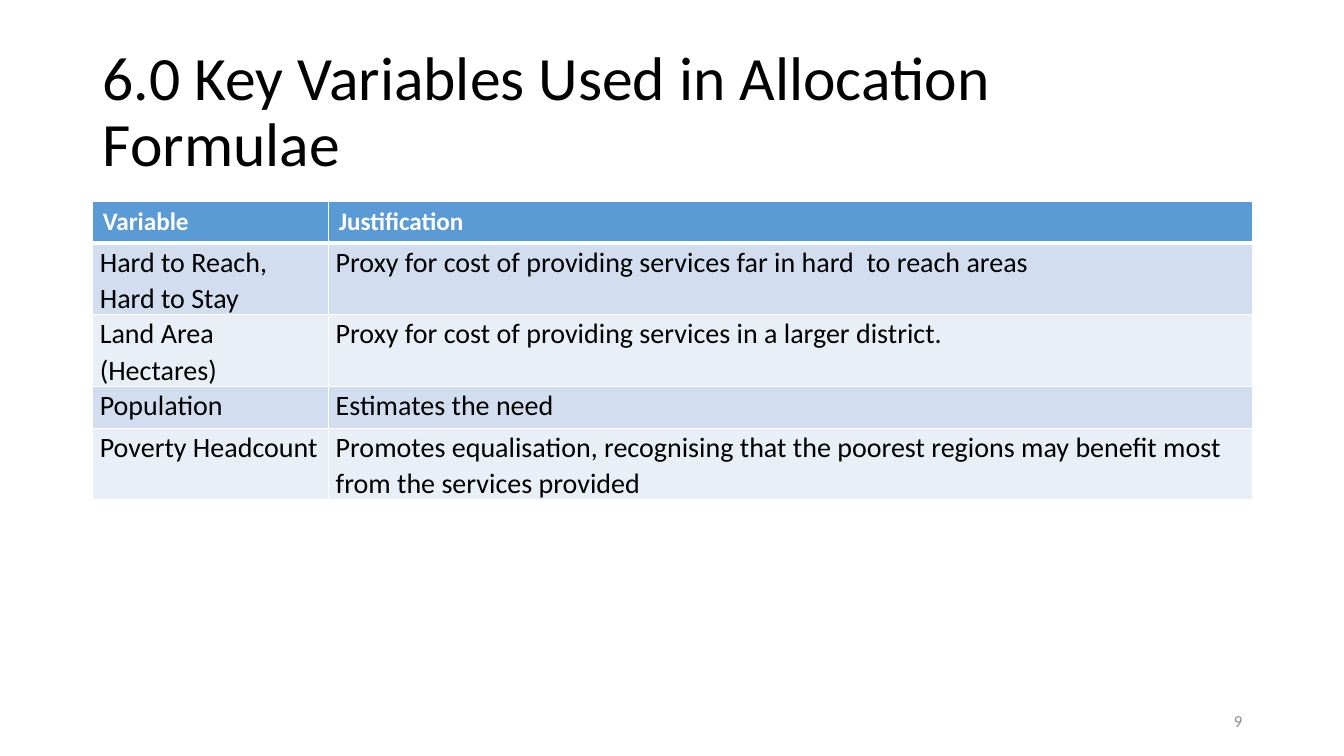
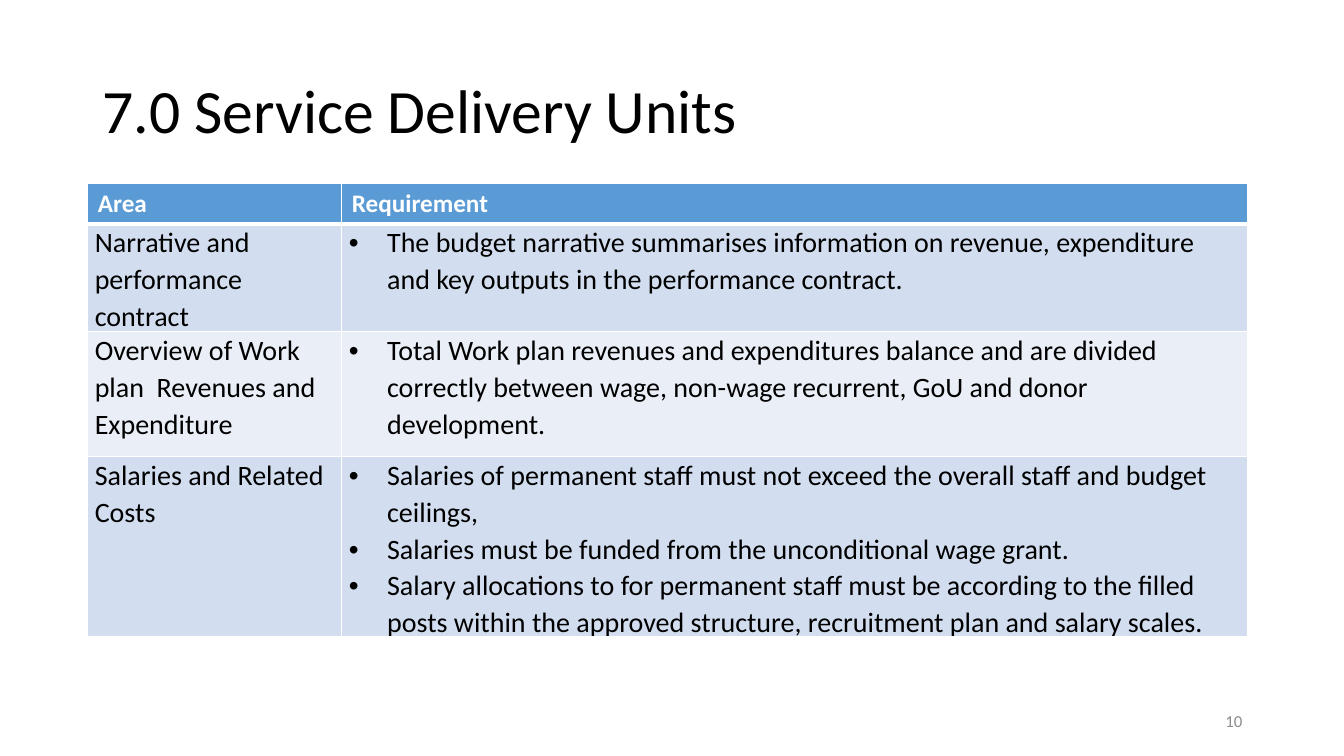
from lxml import etree
from pptx import Presentation
from pptx import util as u
from pptx.dml.color import RGBColor
from pptx.enum import text
from pptx.oxml import ns

COLORS = {
    "ink": "000000",
    "header": "5B9BD5",
    "band_dark": "D2DEEF",
    "band_light": "EAEFF7",
    "white": "FFFFFF",
    "number": "8C8C8C",
}
FONT = "Calibri"
TABLE_WIDTH = 11.5


class Report:
    """Holds the shared style and the current slide."""

    def __init__(self):
        self.deck = Presentation()
        self.deck.slide_width = u.Inches(13.33)
        self.deck.slide_height = u.Inches(7.5)
        self.page = None

    def add_page(self, title, number):
        self.page = self.deck.slides.add_slide(self.deck.slide_layouts[6])
        self.add_box((0.92, 0.4, 11.5, 1.45), title, 44, "ink", spacing=0.9)
        self.add_box((9.42, 6.95, 3, 0.4), str(number), 12, "number",
                     align=text.PP_ALIGN.RIGHT)

    def add_span(self, para, words, size, color, bold=False):
        span = para.add_run()
        span.text = words
        span.font.name = FONT
        span.font.size = u.Pt(size)
        span.font.bold = bold
        span.font.color.rgb = RGBColor.from_string(COLORS[color])

    def add_box(self, place, words, size, color, spacing=1.0,
                align=text.PP_ALIGN.LEFT):
        box = self.page.shapes.add_textbox(*map(u.Inches, place))
        frame = box.text_frame
        frame.word_wrap = True
        frame.vertical_anchor = text.MSO_ANCHOR.MIDDLE
        para = frame.paragraphs[0]
        para.alignment = align
        para.line_spacing = spacing
        self.add_span(para, words, size, color)

    def add_bullet(self, para):
        props = para._p.get_or_add_pPr()
        props.set("marL", str(u.Inches(0.38)))
        props.set("indent", str(u.Inches(-0.38)))
        etree.SubElement(props, ns.qn("a:buFont"), typeface="Arial")
        etree.SubElement(props, ns.qn("a:buChar"), char="•")

    def add_borders(self, cell, top=1, bottom=1):
        props = cell._tc.get_or_add_tcPr()
        edges = {"lnL": 1, "lnR": 1, "lnT": top, "lnB": bottom}
        for place, (edge, points) in enumerate(edges.items()):
            line = etree.Element(ns.qn("a:" + edge), w=str(u.Pt(points)))
            fill = etree.SubElement(line, ns.qn("a:solidFill"))
            etree.SubElement(fill, ns.qn("a:srgbClr"), val=COLORS["white"])
            props.insert(place, line)

    def fill_cell(self, cell, content, row):
        """A list becomes bullets, a string one plain paragraph."""
        header = row == 0
        bulleted = isinstance(content, list)
        if not header:
            cell.margin_left = cell.margin_right = u.Inches(0.07)
            cell.margin_top = cell.margin_bottom = 0
        frame = cell.text_frame
        for index, words in enumerate(content if bulleted else [content]):
            para = frame.add_paragraph() if index else frame.paragraphs[0]
            if header:
                self.add_span(para, words, 18, "white", bold=True)
                continue
            para.line_spacing = 1.07
            if bulleted:
                self.add_bullet(para)
            self.add_span(para, words, 20, "ink")
        band = "header" if header else ("band_light", "band_dark")[row % 2]
        cell.fill.solid()
        cell.fill.fore_color.rgb = RGBColor.from_string(COLORS[band])
        self.add_borders(cell, top=3 if row == 1 else 1,
                         bottom=3 if header else 1)

    def add_table(self, left, top, first_width, heights, rows):
        frame = self.page.shapes.add_table(
            len(rows), 2, u.Inches(left), u.Inches(top),
            u.Inches(TABLE_WIDTH), u.Inches(sum(heights)))
        table = frame.table
        table.columns[0].width = u.Inches(first_width)
        table.columns[1].width = u.Inches(TABLE_WIDTH - first_width)
        for row, (height, contents) in enumerate(zip(heights, rows)):
            table.rows[row].height = u.Inches(height)
            for column, content in enumerate(contents):
                self.fill_cell(table.cell(row, column), content, row)


def main():
    report = Report()

    # Allocation variables
    report.add_page("6.0 Key Variables Used in Allocation Formulae", 9)
    report.add_table(0.92, 2, 2.34, [0.41, 0.41, 0.41, 0.41, 0.49], [
        ("Variable", "Justification"),
        ("Hard to Reach, Hard to Stay",
         "Proxy for cost of providing services far in hard  to reach areas"),
        ("Land Area (Hectares)",
         "Proxy for cost of providing services in a larger district."),
        ("Population", "Estimates the need"),
        ("Poverty Headcount",
         "Promotes equalisation, recognising that the poorest regions may "
         "benefit most from the services provided"),
    ])

    # Service delivery requirements
    report.add_page("7.0 Service Delivery Units", 10)
    report.add_table(0.87, 1.82, 2.52, [0.39, 0.71, 1.24, 1.24], [
        ("Area", "Requirement"),
        ("Narrative and performance contract",
         ["The budget narrative summarises information on revenue, "
          "expenditure and key outputs in the performance contract."]),
        ("Overview of Work plan  Revenues and Expenditure",
         ["Total Work plan revenues and expenditures balance and are divided "
          "correctly between wage, non-wage recurrent, GoU and donor "
          "development."]),
        ("Salaries and Related Costs",
         ["Salaries of permanent staff must not exceed the overall staff and "
          "budget ceilings,",
          "Salaries must be funded from the unconditional wage grant.",
          "Salary allocations to for permanent staff must be according to the "
          "filled posts within the approved structure, recruitment plan and "
          "salary scales."]),
    ])

    report.deck.save("out.pptx")


if __name__ == "__main__":
    main()
